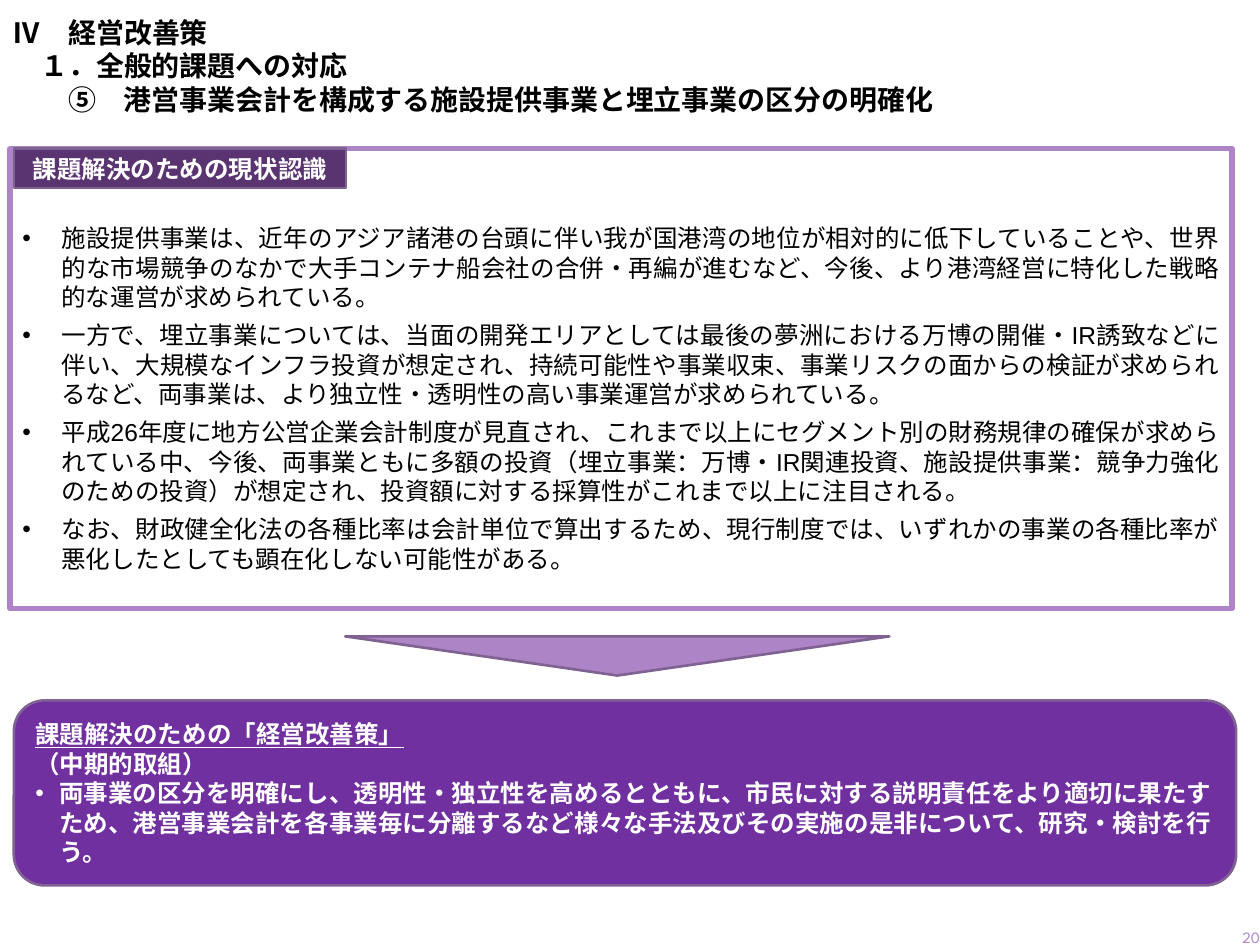
from lxml.etree import SubElement
from pptx import Presentation
from pptx.dml.color import RGBColor
from pptx.enum.shapes import MSO_SHAPE as Preset
from pptx.enum.text import MSO_ANCHOR as Anchor, MSO_AUTO_SIZE as AutoSize, PP_ALIGN as Align
from pptx.oxml.ns import qn
from pptx.util import Cm, Pt

COLORS = {
    "black": "000000",
    "white": "FFFFFF",
    "lilac": "AD84C6",
    "plum": "5A3471",
    "outline": "806292",
    "violet": "7030A0",
}
BODY_FONT = "Arial"
ACCENT_FONT = "League Spartan"

TITLE_LINES = [
    "Ⅳ　経営改善策",
    "１．全般的課題への対応",
    "⑤　港営事業会計を構成する施設提供事業と埋立事業の区分の明確化",
]
SITUATION = [
    "施設提供事業は、近年のアジア諸港の台頭に伴い我が国港湾の地位が相対的に低下していることや、世界的な市場競争のなかで大手コンテナ船会社の合併・再編が進むなど、今後、より港湾経営に特化した戦略的な運営が求められている。",
    "一方で、埋立事業については、当面の開発エリアとしては最後の夢洲における万博の開催・IR誘致などに伴い、大規模なインフラ投資が想定され、持続可能性や事業収束、事業リスクの面からの検証が求められるなど、両事業は、より独立性・透明性の高い事業運営が求められている。",
    "平成26年度に地方公営企業会計制度が見直され、これまで以上にセグメント別の財務規律の確保が求められている中、今後、両事業ともに多額の投資（埋立事業：万博・IR関連投資、施設提供事業：競争力強化のための投資）が想定され、投資額に対する採算性がこれまで以上に注目される。",
    "なお、財政健全化法の各種比率は会計単位で算出するため、現行制度では、いずれかの事業の各種比率が悪化したとしても顕在化しない可能性がある。",
]
MEASURE = "両事業の区分を明確にし、透明性・独立性を高めるとともに、市民に対する説明責任をより適切に果たすため、港営事業会計を各事業毎に分離するなど様々な手法及びその実施の是非について、研究・検討を行う。"


def rgb(name):
    return RGBColor.from_string(COLORS[name])


def add_box(slide, preset, left, top, width, height, line, weight, fill=None):
    box = slide.shapes.add_shape(preset, Cm(left), Cm(top), Cm(width), Cm(height))
    box.shadow.inherit = False
    if fill:
        box.fill.solid()
        box.fill.fore_color.rgb = rgb(fill)
    else:
        box.fill.background()
    box.line.color.rgb = rgb(line)
    box.line.width = Pt(weight)
    return box


def prepare_frame(shape, anchor):
    frame = shape.text_frame
    frame.word_wrap = True
    frame.auto_size = AutoSize.NONE
    frame.vertical_anchor = anchor
    return frame


def write(frame, text, size, font, color, bold=False, underline=False,
          align=Align.LEFT, before=0):
    """Fill the first paragraph while it is empty, else append a new one."""
    first = frame.paragraphs[0]
    paragraph = frame.add_paragraph() if first.runs else first
    paragraph.alignment = align
    paragraph.space_before = Pt(before)
    run = paragraph.add_run()
    run.text = text
    run.font.size = Pt(size)
    run.font.name = font
    run.font.bold = bold
    run.font.underline = underline
    run.font.color.rgb = rgb(color)
    return paragraph


def set_bullet(paragraph, hang):
    properties = paragraph._p.get_or_add_pPr()
    properties.set("marL", str(Cm(hang)))
    properties.set("indent", str(-Cm(hang)))
    SubElement(properties, qn("a:buFont"), typeface="Arial")
    SubElement(properties, qn("a:buChar"), char="•")


def add_title(slide):
    title = slide.shapes.title
    title.left, title.top, title.width, title.height = Cm(0), Cm(0.18), Cm(21.9), Cm(2.57)
    frame = prepare_frame(title, Anchor.TOP)
    for level, line in enumerate(TITLE_LINES):
        paragraph = write(frame, line, 16, BODY_FONT, "black", bold=True)
        paragraph._p.get_or_add_pPr().set("marL", str(Cm(0.56 * level)))


def add_situation(slide):
    panel = add_box(slide, Preset.RECTANGLE, 0.2, 3, 24.64, 9.27, "lilac", 3)
    frame = prepare_frame(panel, Anchor.TOP)
    frame.margin_top = Cm(1.5)
    for point in SITUATION:
        set_bullet(write(frame, point, 14, BODY_FONT, "black",
                         align=Align.JUSTIFY, before=5), 0.79)

    heading = add_box(slide, Preset.RECTANGLE, 0.28, 3, 6.7, 0.79, "outline", 1.5, "plum")
    write(prepare_frame(heading, Anchor.MIDDLE), "課題解決のための現状認識",
          14, ACCENT_FONT, "white", bold=True, align=Align.CENTER)


def add_measures(slide):
    panel = add_box(slide, Preset.ROUNDED_RECTANGLE, 0.28, 14.12, 24.64, 3.73,
                    "outline", 1.5, "violet")
    frame = prepare_frame(panel, Anchor.MIDDLE)
    style = dict(size=14, font=ACCENT_FONT, color="white", bold=True)
    write(frame, "課題解決のための「経営改善策」", underline=True, **style)
    write(frame, "（中期的取組）", **style)
    set_bullet(write(frame, MEASURE, **style), 0.48)


def add_down_pointer(slide):
    pointer = add_box(slide, Preset.ISOSCELES_TRIANGLE, 6.96, 12.83, 10.97, 0.79,
                      "outline", 1.5, "lilac")
    pointer._element.spPr.xfrm.set("flipV", "1")


def add_page_number(slide):
    number = slide.shapes.add_textbox(Cm(24.23), Cm(18.39), Cm(1.42), Cm(1.02))
    write(prepare_frame(number, Anchor.MIDDLE), "20", 9, ACCENT_FONT, "lilac",
          align=Align.RIGHT)


def main():
    deck = Presentation()
    deck.slide_width, deck.slide_height = Cm(25.4), Cm(19.05)
    slide = deck.slides.add_slide(deck.slide_layouts[5])
    add_title(slide)
    add_situation(slide)
    add_measures(slide)
    add_down_pointer(slide)
    add_page_number(slide)
    deck.save("out.pptx")


if __name__ == "__main__":
    main()
